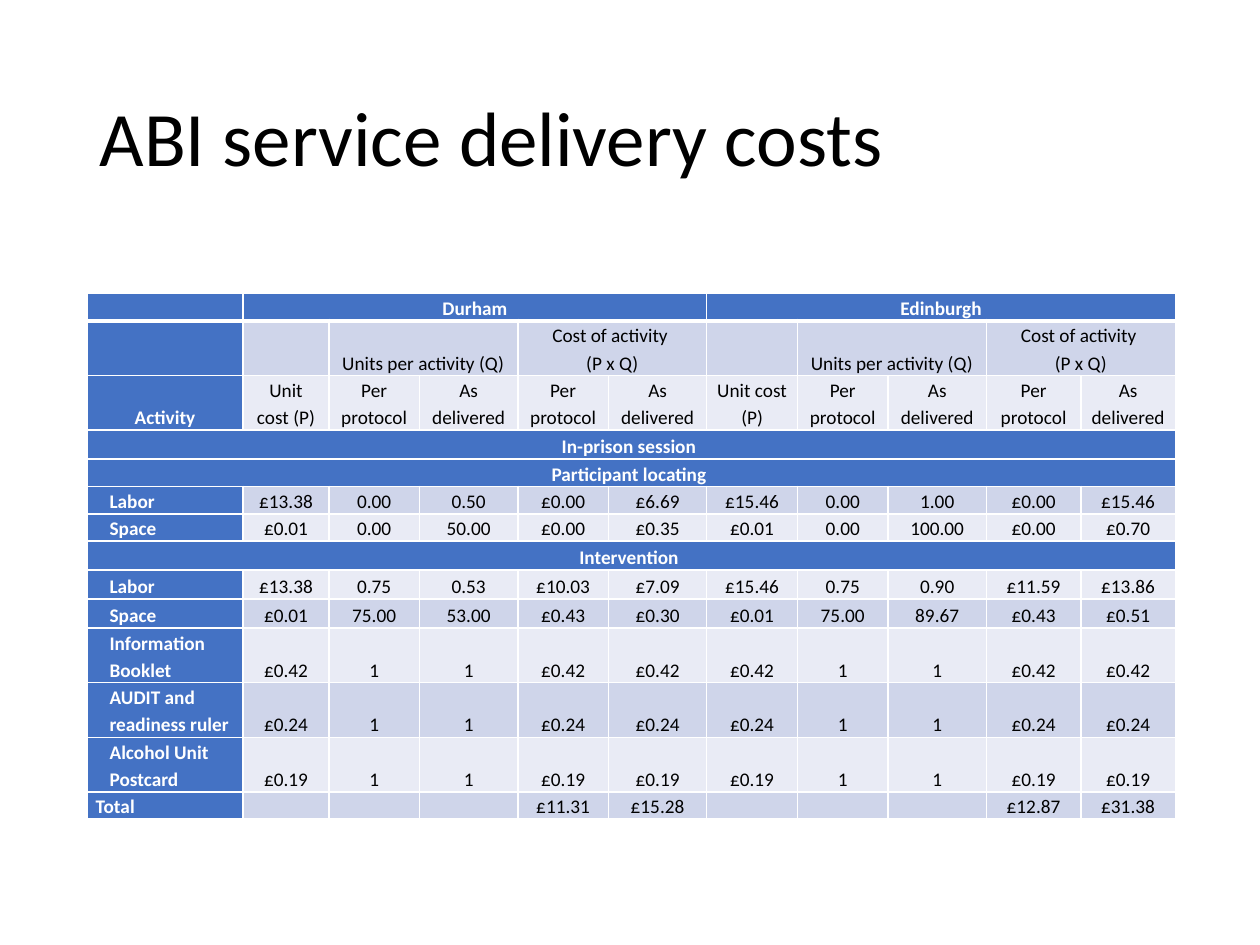
from lxml import etree
from pptx import Presentation
from pptx import util as u
from pptx.dml.color import RGBColor
from pptx.enum import text
from pptx.oxml.ns import qn

# Content
TITLE = "ABI service delivery costs"
SITES = ["Durham", "Edinburgh"]
GROUPS = ["", "Units per activity (Q)", None, "Cost of activity \n(P x Q)", None]
MEASURES = ["Unit cost (P)"] + ["Per protocol", "As delivered"] * 2
ROWS = [
    [""] + [cell for site in SITES for cell in [site] + [None] * 4],
    [""] + GROUPS * 2,
    ["Activity"] + MEASURES * 2,
    ["In-prison session "] + [None] * 10,
    ["Participant locating "] + [None] * 10,
    ["Labor", "£13.38", "0.00", "0.50", "£0.00", "£6.69",
     "£15.46", "0.00", "1.00", "£0.00", "£15.46"],
    ["Space", "£0.01", "0.00", "50.00", "£0.00", "£0.35",
     "£0.01", "0.00", "100.00", "£0.00", "£0.70"],
    ["Intervention "] + [None] * 10,
    ["Labor", "£13.38", "0.75", "0.53", "£10.03", "£7.09",
     "£15.46", "0.75", "0.90", "£11.59", "£13.86"],
    ["Space", "£0.01", "75.00", "53.00", "£0.43", "£0.30",
     "£0.01", "75.00", "89.67", "£0.43", "£0.51"],
    ["Information Booklet"] + ["£0.42", "1", "1", "£0.42", "£0.42"] * 2,
    ["AUDIT and readiness ruler"] + ["£0.24", "1", "1", "£0.24", "£0.24"] * 2,
    ["Alcohol Unit Postcard"] + ["£0.19", "1", "1", "£0.19", "£0.19"] * 2,
    ["Total", "", "", "", "£11.31", "£15.28", "", "", "", "£12.87", "£31.38"],
]

# Format
COLORS = {"head": "4472C4", "odd": "CFD5EA", "even": "E9EBF5",
          "white": "FFFFFF", "black": "000000"}
FONT, SIZE = "Calibri", 11
COL_WIDTHS = [1.24, 0.68, 0.72, 0.78, 0.72, 0.78, 0.72, 0.72, 0.78, 0.75, 0.75]
ROW_HEIGHTS = [0.21, 0.42, 0.42, 0.23, 0.21, 0.21, 0.21,
               0.23, 0.23, 0.23, 0.42, 0.42, 0.42, 0.21]
CELL = {"margin_left": u.Inches(0.07), "margin_right": u.Inches(0.07),
        "margin_top": 0, "margin_bottom": 0,
        "vertical_anchor": text.MSO_ANCHOR.BOTTOM}


def rgb(name):
    return RGBColor.from_string(COLORS[name])


def set_all(obj, values):
    for name, value in values.items():
        setattr(obj, name, value)


def add_borders(cell, row):
    """White edges, with a heavier rule under the site row."""
    tcPr = cell._tc.get_or_add_tcPr()
    for side in "LRTB":
        heavy = (row, side) in ((0, "B"), (1, "T"))
        ln = etree.SubElement(tcPr, qn("a:ln" + side), w=str(u.Pt(3 if heavy else 1)))
        fill = etree.SubElement(ln, qn("a:solidFill"))
        etree.SubElement(fill, qn("a:srgbClr"), val=COLORS["white"])


def write(cell, value, head, align, indent):
    p = cell.text_frame.paragraphs[0]
    if not value:
        etree.SubElement(p._p, qn("a:endParaRPr"), sz=str(SIZE * 100))
        return
    p.text = value
    set_all(p, {"alignment": align, "line_spacing": 1.15})
    if indent:
        p._p.get_or_add_pPr().set("marL", str(u.Inches(0.11)))
    for r in p.runs:
        set_all(r.font, {"name": FONT, "size": u.Pt(SIZE), "bold": head})
        r.font.color.rgb = rgb("white" if head else "black")


prs = Presentation()
set_all(prs, {"slide_width": u.Inches(10), "slide_height": u.Inches(7.5)})
s = prs.slides.add_slide(prs.slide_layouts[5])

# Title
title = s.shapes.title
set_all(title, {"left": u.Inches(0.69), "top": u.Inches(0.4),
                "width": u.Inches(8.62), "height": u.Inches(1.45)})
tf = title.text_frame
set_all(tf, {"text": TITLE, "word_wrap": True,
             "vertical_anchor": text.MSO_ANCHOR.MIDDLE})
p = tf.paragraphs[0]
set_all(p, {"alignment": text.PP_ALIGN.LEFT, "line_spacing": 0.9})
set_all(p.runs[0].font, {"name": FONT, "size": u.Pt(44)})
p.runs[0].font.color.rgb = rgb("black")

# Cost table
table = s.shapes.add_table(
    len(ROWS), len(COL_WIDTHS), u.Inches(0.69), u.Inches(2.33),
    u.Inches(sum(COL_WIDTHS)), u.Inches(sum(ROW_HEIGHTS))).table
table.first_col = True
for column, width in zip(table.columns, COL_WIDTHS):
    column.width = u.Inches(width)
for row, height in zip(table.rows, ROW_HEIGHTS):
    row.height = u.Inches(height)

for i, values in enumerate(ROWS):
    banner = None in values and i > 1
    for j, value in enumerate(values):
        cell = table.cell(i, j)
        head = i == 0 or j == 0 or banner
        set_all(cell, CELL)
        add_borders(cell, i)
        cell.fill.solid()
        cell.fill.fore_color.rgb = rgb("head" if head else "odd" if i % 2 else "even")
        label = j == 0 and i > 2 and not banner
        align = text.PP_ALIGN.LEFT if label else text.PP_ALIGN.CENTER
        write(cell, value, head, align, label and value != "Total")

    # None continues the cell to its left
    starts = [j for j, value in enumerate(values) if value is not None]
    for first, following in zip(starts, starts[1:] + [len(values)]):
        if following - first > 1:
            table.cell(i, first).merge(table.cell(i, following - 1))

prs.save("out.pptx")
